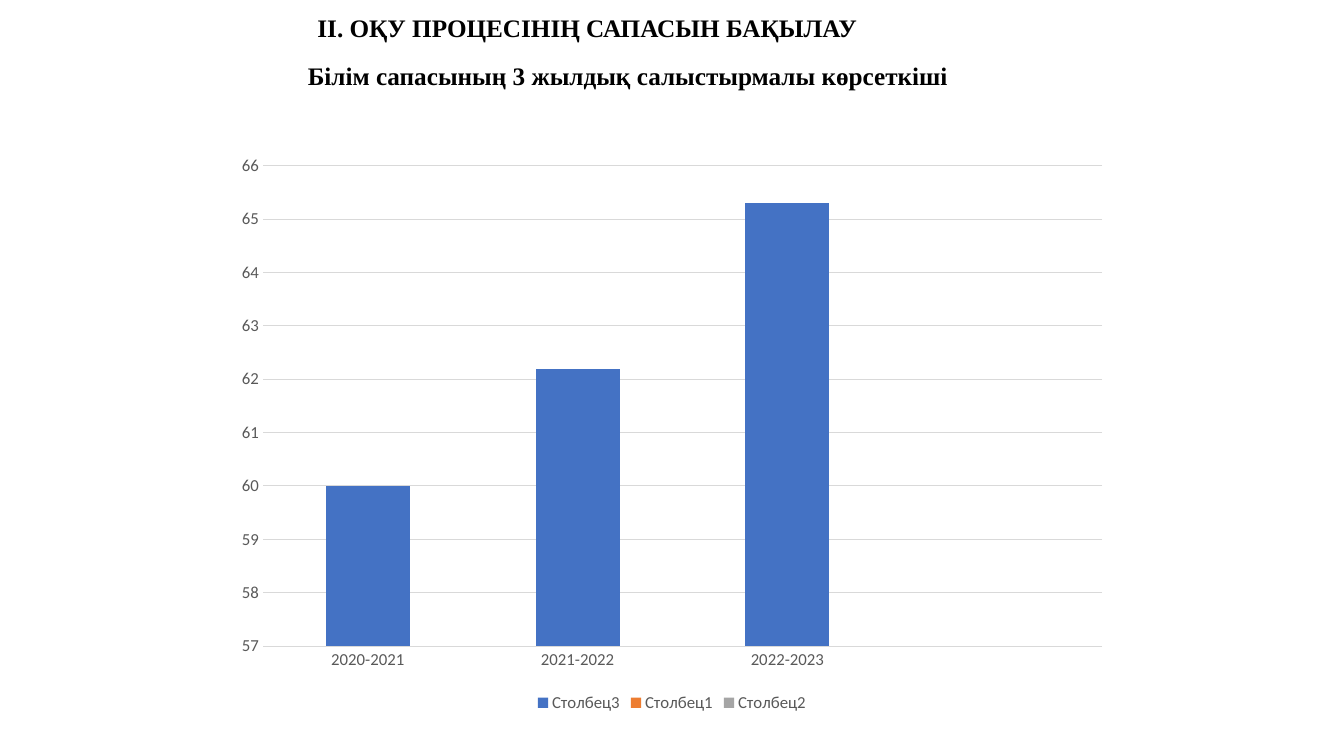
from dataclasses import dataclass

from pptx import Presentation
from pptx import util as u
from pptx.chart import data as chart_data
from pptx.dml import color
from pptx.enum import chart as chart_enum
from pptx.enum import text


@dataclass(frozen=True)
class Theme:
    heading_font: str = "Times New Roman"
    chart_font: str = "Calibri"
    heading_size: float = 18
    chart_size: float = 12
    heading_color: str = "000000"
    label_color: str = "595959"
    grid_color: str = "D9D9D9"
    series_colors: tuple = ("4472C4", "ED7D31", "A5A5A5")


def rgb(value):
    return color.RGBColor.from_string(value)


def format_font(font, name, size, fill, bold=False):
    font.name = name
    font.size = u.Pt(size)
    font.bold = bold
    font.color.rgb = rgb(fill)


def write_text(shape, content, align=text.PP_ALIGN.CENTER, **font_format):
    frame = shape.text_frame
    frame.word_wrap = True
    frame.vertical_anchor = text.MSO_ANCHOR.TOP
    frame.auto_size = text.MSO_AUTO_SIZE.SHAPE_TO_FIT_TEXT
    paragraph = frame.paragraphs[0]
    paragraph.alignment = align
    run = paragraph.add_run()
    run.text = content
    format_font(run.font, **font_format)


class SlideBuilder:
    def __init__(self, slide, theme):
        self.slide = slide
        self.theme = theme

    def heading(self, shape, content):
        write_text(shape, content, name=self.theme.heading_font,
                   size=self.theme.heading_size,
                   fill=self.theme.heading_color, bold=True)

    def title(self, content, left, top, width, height):
        shape = self.slide.shapes.title
        shape.left, shape.top = u.Pt(left), u.Pt(top)
        shape.width, shape.height = u.Pt(width), u.Pt(height)
        self.heading(shape, content)

    def subtitle(self, content, left, top, width, height):
        shape = self.slide.shapes.add_textbox(
            u.Pt(left), u.Pt(top), u.Pt(width), u.Pt(height))
        self.heading(shape, content)

    def chart_text(self, font):
        format_font(font, self.theme.chart_font, self.theme.chart_size,
                    self.theme.label_color)

    def column_chart(self, categories, series, scale, left, top, width, height):
        data = chart_data.CategoryChartData()
        data.categories = categories
        for name, values in series.items():
            data.add_series(name, values)
        chart = self.slide.shapes.add_chart(
            chart_enum.XL_CHART_TYPE.COLUMN_STACKED,
            u.Pt(left), u.Pt(top), u.Pt(width), u.Pt(height), data).chart
        chart.has_title = False
        self.chart_text(chart.font)

        plot = chart.plots[0]
        plot.gap_width = 150
        plot.overlap = 100
        plot.vary_by_categories = False
        for column, fill in zip(plot.series, self.theme.series_colors):
            column.format.fill.solid()
            column.format.fill.fore_color.rgb = rgb(fill)

        for axis in (chart.category_axis, chart.value_axis):
            axis.major_tick_mark = chart_enum.XL_TICK_MARK.NONE
            axis.minor_tick_mark = chart_enum.XL_TICK_MARK.NONE
            axis.format.line.fill.background()
            self.chart_text(axis.tick_labels.font)

        value_axis = chart.value_axis
        value_axis.minimum_scale, value_axis.maximum_scale = scale
        value_axis.major_unit = 1
        value_axis.has_major_gridlines = True
        grid_line = value_axis.major_gridlines.format.line
        grid_line.width = u.Pt(0.75)
        grid_line.color.rgb = rgb(self.theme.grid_color)

        chart.has_legend = True
        chart.legend.position = chart_enum.XL_LEGEND_POSITION.BOTTOM
        chart.legend.include_in_layout = False
        self.chart_text(chart.legend.font)


def main():
    presentation = Presentation()
    presentation.slide_width = u.Pt(960)
    presentation.slide_height = u.Pt(540)
    slide = presentation.slides.add_slide(presentation.slide_layouts[5])
    builder = SlideBuilder(slide, Theme())

    builder.title("ІІ. ОҚУ ПРОЦЕСІНІҢ САПАСЫН БАҚЫЛАУ", 0, 5, 839, 29)
    builder.column_chart(
        ["2020-2021", "2021-2022", "2022-2023", ""],
        {
            "Столбец3": [60, 62.2, 65.3, None],
            "Столбец1": [None] * 4,
            "Столбец2": [None] * 4,
        },
        (57, 66), 160, 103, 640, 409)
    builder.subtitle("Білім сапасының 3 жылдық салыстырмалы көрсеткіші ",
                     27, 39.5, 847.5, 29)

    presentation.save("out.pptx")


if __name__ == "__main__":
    main()
